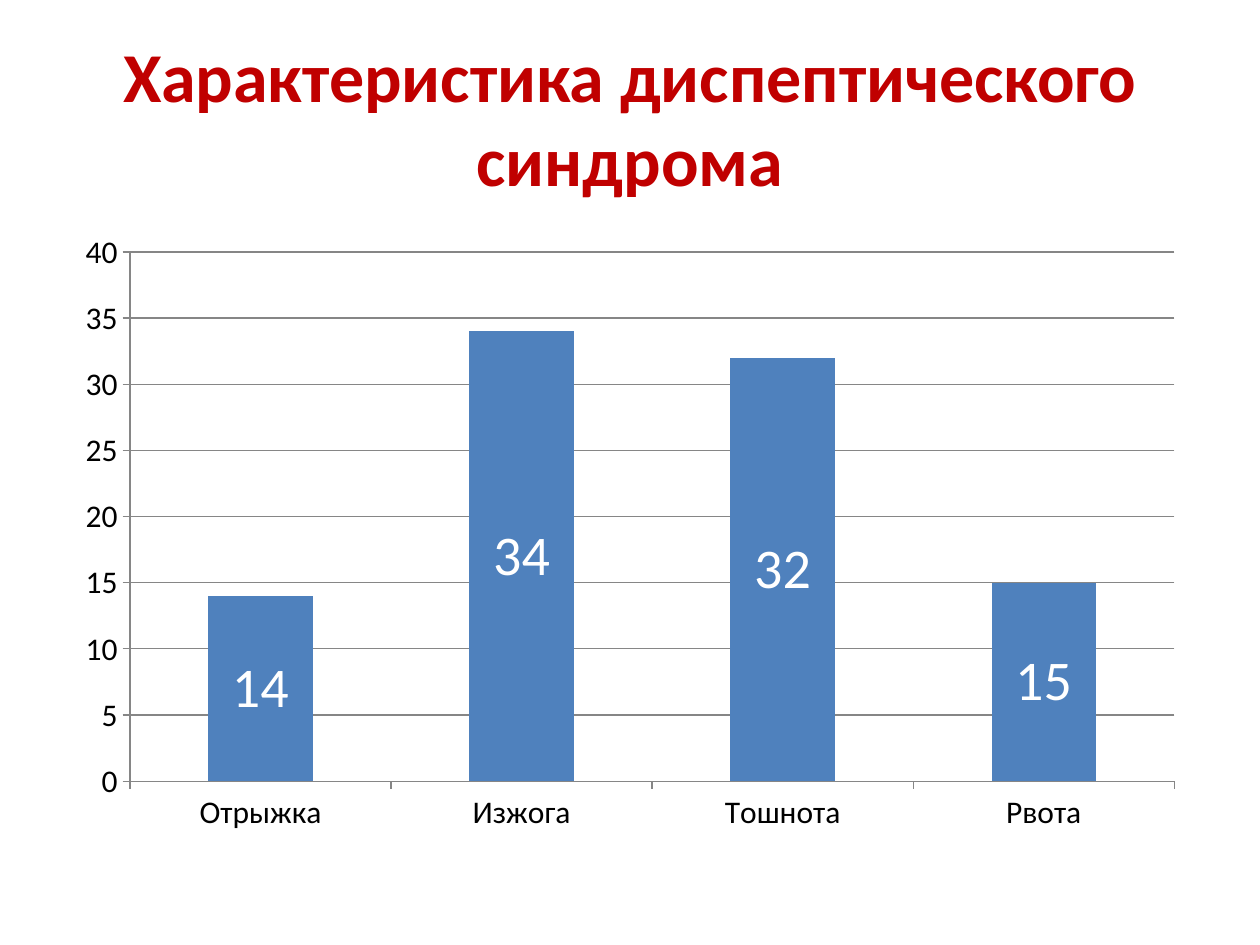
import pptx
import pptx.chart.data
import pptx.dml.color
import pptx.enum.chart
import pptx.enum.text
import pptx.util

Pt = pptx.util.Pt
FONT = "Calibri"
COLORS = {
    "title": "C00000",
    "text": "000000",
    "bar": "4F81BD",
    "label": "FFFFFF",
    "grid": "868686",
}
SYMPTOMS = {"Отрыжка": 14, "Изжога": 34, "Тошнота": 32, "Рвота": 15}


def rgb(name):
    return pptx.dml.color.RGBColor.from_string(COLORS[name])


class SlideBuilder:
    def __init__(self, prs):
        self.s = prs.slides.add_slide(prs.slide_layouts[5])

    def font(self, font, size, color, bold=False):
        values = {"name": FONT, "size": Pt(size), "bold": bold}
        for name, value in values.items():
            setattr(font, name, value)
        font.color.rgb = rgb(color)

    def title(self, text, left, top, width, height):
        sp = self.s.shapes.title
        box = {"left": left, "top": top, "width": width, "height": height}
        for name, value in box.items():
            setattr(sp, name, Pt(value))
        tf = sp.text_frame
        tf.word_wrap = True
        tf.vertical_anchor = pptx.enum.text.MSO_ANCHOR.MIDDLE
        p = tf.paragraphs[0]
        p.alignment = pptx.enum.text.PP_ALIGN.CENTER
        r = p.add_run()
        r.text = text
        self.font(r.font, 40, "title", bold=True)

    def column_chart(self, values, left, top, width, height):
        data = pptx.chart.data.CategoryChartData()
        data.categories = list(values)
        data.add_series("Series 1", list(values.values()))
        chart = self.s.shapes.add_chart(
            pptx.enum.chart.XL_CHART_TYPE.COLUMN_STACKED,
            Pt(left), Pt(top), Pt(width), Pt(height), data,
        ).chart
        chart.has_legend = False
        chart.has_title = False
        self.font(chart.font, 18, "text")

        for axis in (chart.category_axis, chart.value_axis):
            axis.major_tick_mark = pptx.enum.chart.XL_TICK_MARK.OUTSIDE
            self.line(axis.format.line)
        axis = chart.value_axis
        scale = {"minimum_scale": 0, "maximum_scale": 40, "major_unit": 5}
        for name, value in scale.items():
            setattr(axis, name, value)
        axis.has_major_gridlines = True
        self.line(axis.major_gridlines.format.line)

        plot = chart.plots[0]
        style = {"vary_by_categories": False, "gap_width": 150,
                 "overlap": 100, "has_data_labels": True}
        for name, value in style.items():
            setattr(plot, name, value)
        fill = plot.series[0].format.fill
        fill.solid()
        fill.fore_color.rgb = rgb("bar")
        labels = plot.data_labels
        labels.show_value = True
        labels.position = pptx.enum.chart.XL_LABEL_POSITION.CENTER
        self.font(labels.font, 32, "label")

    def line(self, line):
        line.width = Pt(0.75)
        line.color.rgb = rgb("grid")


def main():
    prs = pptx.Presentation()
    prs.slide_width, prs.slide_height = Pt(720), Pt(540)
    slide = SlideBuilder(prs)
    slide.title("Характеристика диспептического синдрома", 36, 21.6, 648, 90)
    slide.column_chart(SYMPTOMS, 36, 126, 648, 356.4)
    prs.save("out.pptx")


if __name__ == "__main__":
    main()
